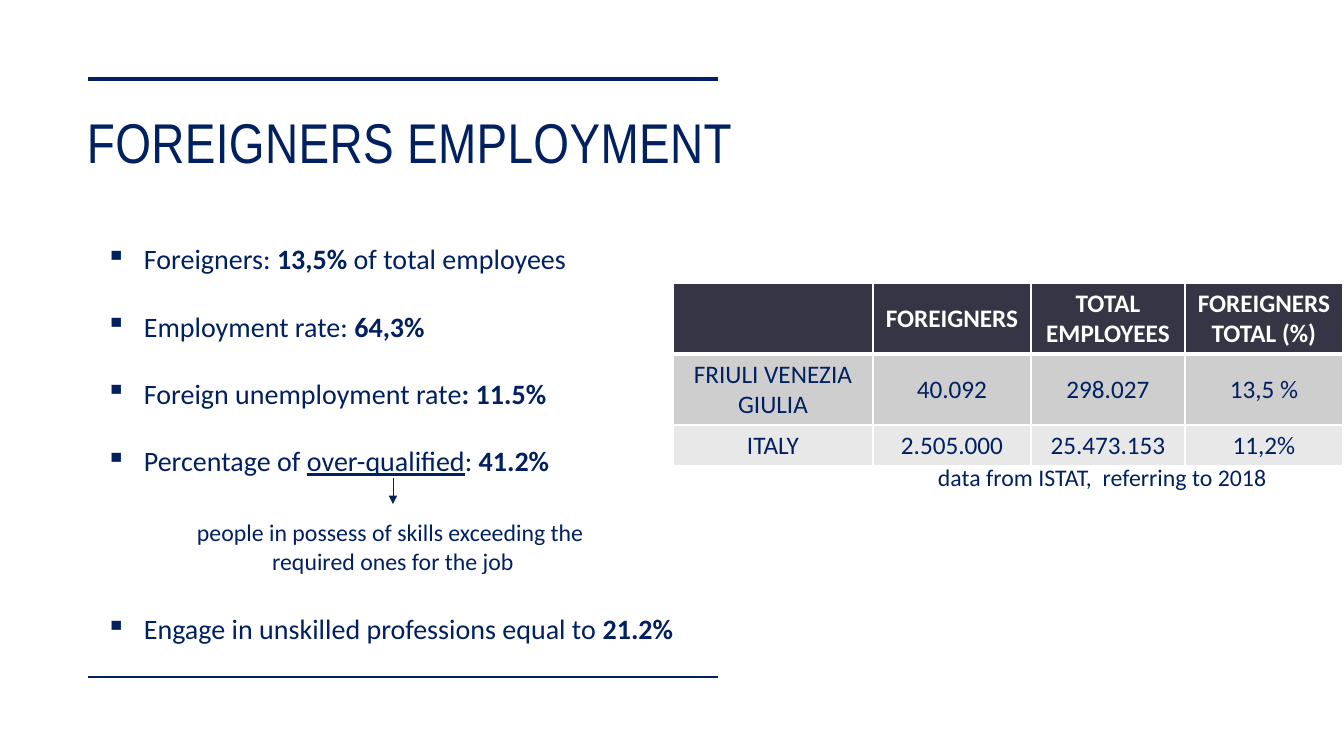
from dataclasses import dataclass

from lxml import etree
from pptx import Presentation
from pptx import util as u
from pptx.dml.color import RGBColor
from pptx.enum import shapes, text
from pptx.oxml import ns

PX = 914400 / 100.8


@dataclass(frozen=True)
class Theme:
    """Colours, fonts and type sizes of the slide."""
    navy: str = "002060"
    white: str = "FFFFFF"
    header: str = "363545"
    bands: tuple = ("CECECF", "E8E8E9")
    title_font: str = "Arial Narrow"
    body_font: str = "Calibri"
    title: int = 40
    body: int = 20
    table: int = 18
    note: int = 17


THEME = Theme()

FACTS = [
    (0, [("Foreigners: ", ""), ("13,5% ", "b"), ("of total employees", "")]),
    (24, [("Employment rate: ", ""), ("64,3%", "b")]),
    (24, [("Foreign unemployment rate", ""), (": 11.5%", "b")]),
    (24, [("Percentage of ", ""), ("over-qualified", "u"), (": ", ""), ("41.2%", "b")]),
    (96, [("Engage in unskilled professions equal to ", ""), ("21.2%", "b")]),
]
EMPLOYMENT = [
    ["", "FOREIGNERS", "TOTAL EMPLOYEES", "FOREIGNERS TOTAL (%)"],
    ["FRIULI VENEZIA GIULIA", "40.092", "298.027", "13,5 %"],
    ["ITALY", "2.505.000", "25.473.153", "11,2%"],
]


def px(length):
    """Turn pixels into EMU."""
    return u.Emu(round(length * PX))


def add_xml(parent, tag, **attributes):
    """Append a DrawingML element."""
    return etree.SubElement(parent, ns.qn(tag), attributes)


def set_font(paragraph, size, color=THEME.navy, name=THEME.body_font, bold=None):
    """Style a whole paragraph."""
    font = paragraph.font
    font.size, font.name, font.bold = u.Pt(size), name, bold
    font.color.rgb = RGBColor.from_string(color)


def add_frame(slide, box, anchor=text.MSO_ANCHOR.TOP):
    """Add a wrapping text box and return its frame."""
    frame = slide.shapes.add_textbox(*map(px, box)).text_frame
    frame.word_wrap = True
    frame.vertical_anchor = anchor
    return frame


def add_line(slide, start, end, weight):
    """Draw a navy line without shadow."""
    line = slide.shapes.add_connector(
        shapes.MSO_CONNECTOR.STRAIGHT, *map(px, (*start, *end)))
    line.line.color.rgb = RGBColor.from_string(THEME.navy)
    line.line.width = u.Pt(weight)
    add_xml(line.element.spPr, "a:effectLst")
    return line


def add_title(slide, box):
    """Write the slide title."""
    heading = add_frame(slide, box, text.MSO_ANCHOR.MIDDLE).paragraphs[0]
    run = heading.add_run()
    run.text = "FOREIGNERS EMPLOYMENT"
    run.font._element.set("spc", "30")
    set_font(heading, THEME.title, name=THEME.title_font)


def add_rules(slide, box):
    """Draw the thick top rule and the thin bottom rule."""
    left, top, width, height = box
    for y, weight in ((top, 3.5), (top + height, 1)):
        add_line(slide, (left, y), (left + width, y), weight)


def add_facts(slide, box):
    """List the employment rates as bullets."""
    frame = add_frame(slide, box)
    for index, (gap, parts) in enumerate(FACTS):
        fact = frame.add_paragraph() if index else frame.paragraphs[0]
        fact.space_before = u.Pt(gap)
        properties = fact._p.get_or_add_pPr()
        properties.set("marL", str(px(38)))
        properties.set("indent", str(-px(38)))
        add_xml(add_xml(properties, "a:buClr"), "a:srgbClr", val=THEME.navy)
        add_xml(properties, "a:buChar", char="▪")
        set_font(fact, THEME.body)
        for words, style in parts:
            run = fact.add_run()
            run.text = words
            if style:
                run.font.bold = style == "b"
                run.font.underline = style == "u"


def add_explanation(slide, box):
    """Explain over-qualified under a small arrow."""
    left, top, width, height = box
    middle = left + width // 2
    arrow = add_line(slide, (middle, top), (middle, top + 26), 0.5)
    add_xml(arrow.line._get_or_add_ln(), "a:tailEnd", type="triangle")
    frame = add_frame(slide, (left, top + 35, width, height - 35))
    frame.text = "people in possess of skills exceeding the \nrequired ones for the job"
    for line in frame.paragraphs:
        line.alignment = text.PP_ALIGN.CENTER
        set_font(line, THEME.note)


def add_borders(cell, widths):
    """Give a cell white borders of the widths in points."""
    properties = cell._tc.get_or_add_tcPr()
    for side, width in widths.items():
        border = add_xml(properties, f"a:ln{side}", w=str(u.Pt(width)))
        add_xml(add_xml(border, "a:solidFill"), "a:srgbClr", val=THEME.white)


def add_employment_table(slide, box, columns, rows):
    """Compare the region with the country."""
    table = slide.shapes.add_table(len(rows), len(columns), *map(px, box)).table
    for column, width in zip(table.columns, columns):
        column.width = px(width)
    for r, (row, height) in enumerate(zip(table.rows, rows)):
        row.height = px(height)
        fill = THEME.bands[r - 1] if r else THEME.header
        for cell, words in zip(row.cells, EMPLOYMENT[r]):
            add_borders(cell, {"L": 1, "R": 1, "T": 3 if r == 1 else 1,
                               "B": 1 if r else 3})
            cell.fill.solid()
            cell.fill.fore_color.rgb = RGBColor.from_string(fill)
            cell.vertical_anchor = text.MSO_ANCHOR.MIDDLE
            cell.text = words
            entry = cell.text_frame.paragraphs[0]
            entry.alignment = text.PP_ALIGN.CENTER
            set_font(entry, THEME.table, THEME.navy if r else THEME.white, bold=not r)


def add_credit(slide, box):
    """Name the data source."""
    frame = add_frame(slide, box)
    frame.text = "data from ISTAT,  referring to 2018"
    set_font(frame.paragraphs[0], THEME.note)


def main():
    """Build and save the slide."""
    deck = Presentation()
    deck.slide_width, deck.slide_height = px(1344), px(756)
    slide = deck.slides.add_slide(deck.slide_layouts[6])
    add_title(slide, (77, 100, 785, 82))
    add_rules(slide, (88, 79, 630, 598))
    add_facts(slide, (96, 237, 749, 448))
    add_explanation(slide, (170, 478, 446, 103))
    add_employment_table(slide, (673, 283, 670, 182), (200, 158, 154, 158), (71, 71, 40))
    add_credit(slide, (928, 458, 426, 39))
    deck.save("out.pptx")


if __name__ == "__main__":
    main()
